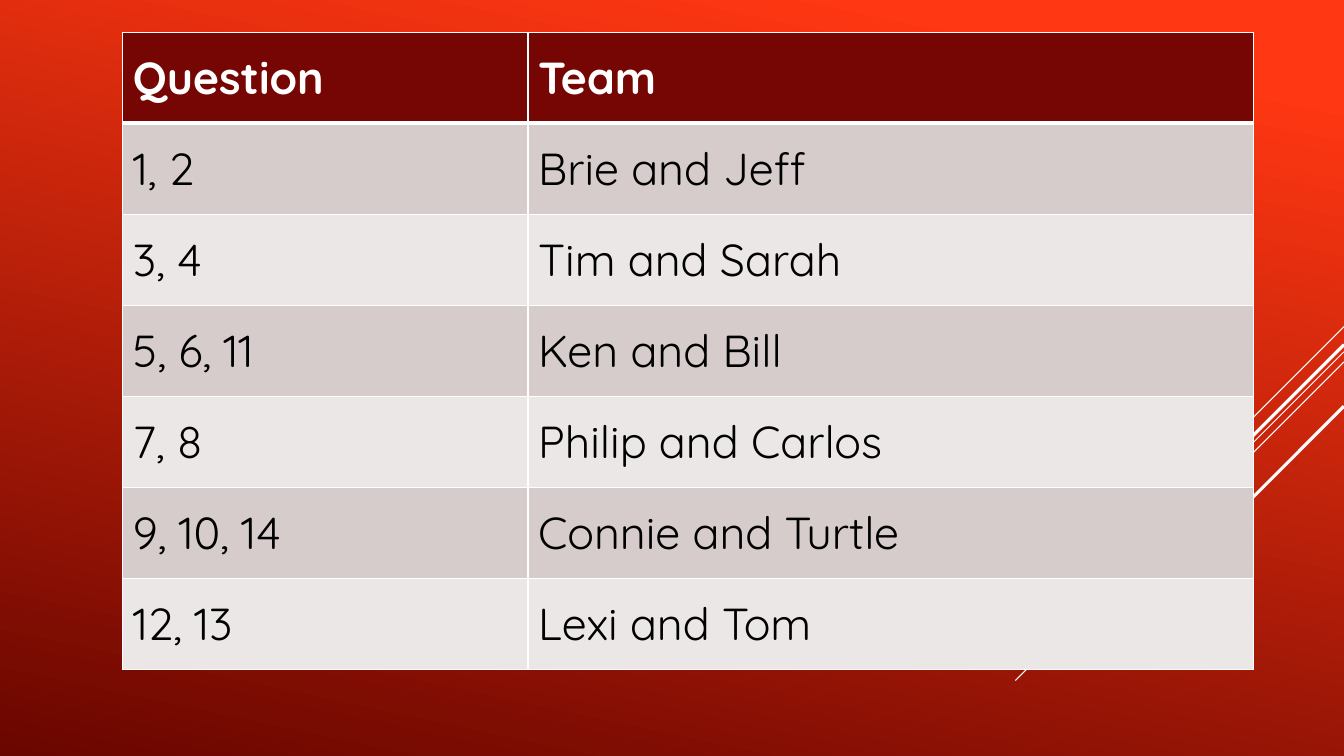
from dataclasses import dataclass

from lxml.etree import SubElement
from pptx import Presentation
from pptx.dml.color import RGBColor as Rgb
from pptx.enum.shapes import MSO_CONNECTOR as Connector
from pptx.enum.text import MSO_ANCHOR as Anchor
from pptx.oxml import parse_xml
from pptx.oxml.ns import nsdecls, qn
from pptx.util import Pt

HEADINGS = ("Question", "Team")
ASSIGNMENTS = [
    ("1, 2", "Brie and Jeff"),
    ("3, 4", "Tim and Sarah"),
    ("5, 6, 11", "Ken and Bill"),
    ("7, 8", "Philip and Carlos"),
    ("9, 10, 14", "Connie and Turtle"),
    ("12, 13", "Lexi and Tom"),
]
RAYS = [
    {"top": 233.3, "run": 72, "weight": 0.75},
    {"top": 251.3, "run": 234.7, "weight": 0.75},
    {"top": 258.5, "run": 149, "weight": 0.75},
    {"top": 246.2, "run": 137.5, "weight": 2.25},
    {"top": 290.2, "run": 100, "weight": 2.25},
]
SLIDE_WIDTH, SLIDE_HEIGHT = 960, 540
TABLE_LEFT, TABLE_TOP = 87.8, 23
COLUMN_WIDTHS = (289.4, 518.4)
ROW_HEIGHT = 65


@dataclass(frozen=True)
class Theme:
    font: str = "Quicksand"
    size: float = 32
    glow: str = "FF3712"
    shade: str = "6A0600"
    white: str = "FFFFFF"
    ink: str = "000000"
    heading: str = "760603"
    bands: tuple = ("D6CCCC", "ECE7E7")
    rule: float = 1
    heading_rule: float = 3


THEME = Theme()


def paint_background(slide):
    fill = slide.background.fill
    fill.gradient()
    fill.gradient_angle = 360 - 102
    for stop, color, position in zip(fill.gradient_stops, (THEME.glow, THEME.shade), (0.1, 1)):
        stop.color.rgb = Rgb.from_string(color)
        stop.position = position


def draw_ray(slide, top, run, weight):
    ray = slide.shapes.add_connector(
        Connector.STRAIGHT, Pt(SLIDE_WIDTH), Pt(top), Pt(SLIDE_WIDTH - run), Pt(top + run))
    ray.line.color.rgb = Rgb.from_string(THEME.white)
    ray.line.width = Pt(weight)
    SubElement(ray._element.spPr, qn("a:effectLst"))


def rule_cell(cell, row):
    weights = {
        "lnL": THEME.rule,
        "lnR": THEME.rule,
        "lnT": THEME.heading_rule if row == 1 else THEME.rule,
        "lnB": THEME.heading_rule if row == 0 else THEME.rule,
    }
    properties = cell._tc.get_or_add_tcPr()
    for order, (side, weight) in enumerate(weights.items()):
        properties.insert(order, parse_xml(
            f'<a:{side} {nsdecls("a")} w="{Pt(weight)}"><a:solidFill>'
            f'<a:srgbClr val="{THEME.white}"/></a:solidFill></a:{side}>'))


def fill_cell(cell, wording, row):
    is_heading = row == 0
    color = THEME.heading if is_heading else THEME.bands[(row - 1) % 2]
    cell.fill.solid()
    cell.fill.fore_color.rgb = Rgb.from_string(color)
    cell.vertical_anchor = Anchor.MIDDLE
    cell.text_frame.text = wording
    font = cell.text_frame.paragraphs[0].runs[0].font
    font.name = THEME.font
    font.size = Pt(THEME.size)
    font.bold = is_heading
    font.color.rgb = Rgb.from_string(THEME.white if is_heading else THEME.ink)
    rule_cell(cell, row)


def add_assignments(slide):
    entries = [HEADINGS, *ASSIGNMENTS]
    roster = slide.shapes.add_table(
        len(entries), len(HEADINGS), Pt(TABLE_LEFT), Pt(TABLE_TOP),
        Pt(sum(COLUMN_WIDTHS)), Pt(ROW_HEIGHT * len(entries))).table
    for column, width in zip(roster.columns, COLUMN_WIDTHS):
        column.width = Pt(width)
    for row, entry in enumerate(entries):
        roster.rows[row].height = Pt(ROW_HEIGHT)
        for column, wording in enumerate(entry):
            fill_cell(roster.cell(row, column), wording, row)


def main():
    deck = Presentation()
    deck.slide_width, deck.slide_height = Pt(SLIDE_WIDTH), Pt(SLIDE_HEIGHT)
    slide = deck.slides.add_slide(deck.slide_layouts[6])
    paint_background(slide)
    for ray in RAYS:
        draw_ray(slide, **ray)
    add_assignments(slide)
    deck.save("out.pptx")


if __name__ == "__main__":
    main()
